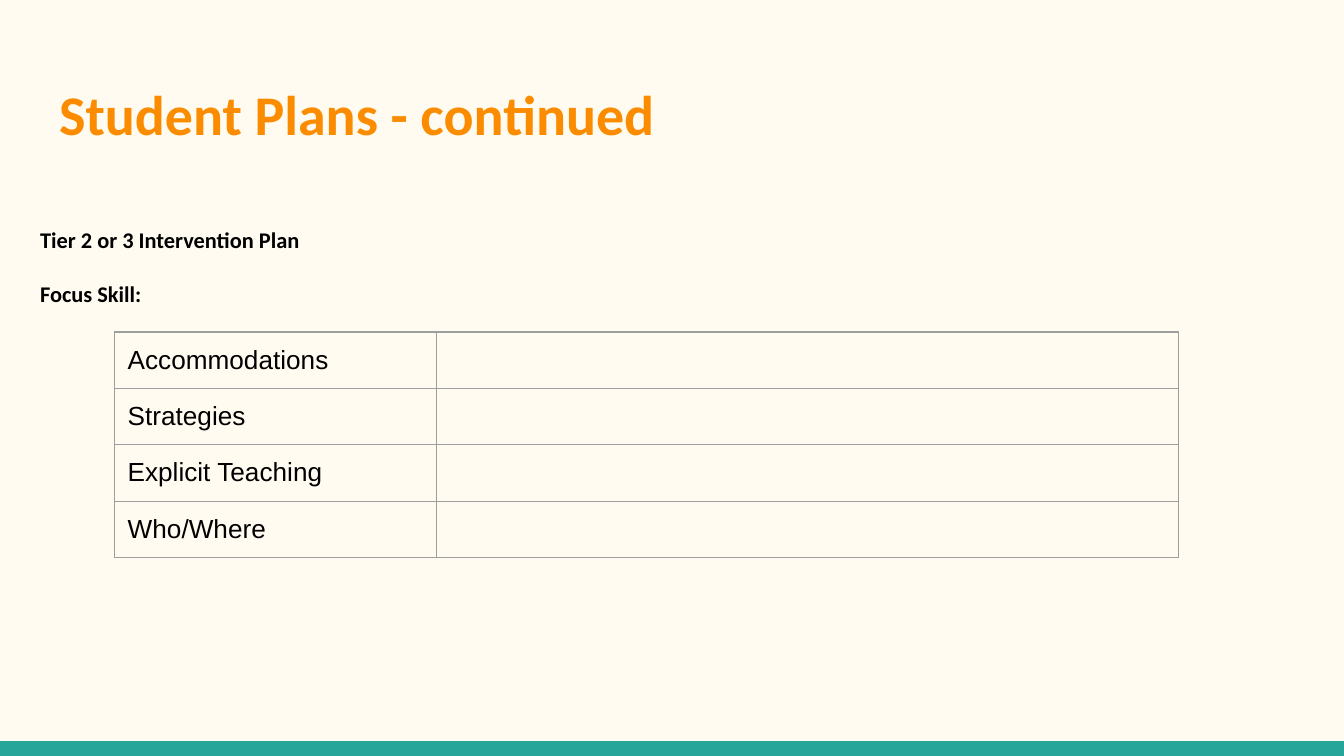
import lxml.etree
import pptx
import pptx.dml.color
import pptx.enum.shapes
import pptx.enum.text
import pptx.oxml.ns
import pptx.util
from pptx.util import Inches

WIDTH = 10
HEIGHT = WIDTH * 9 / 16
BAR_HEIGHT = 0.11
PLAN_ROWS = ["Accommodations", "Strategies", "Explicit Teaching", "Who/Where"]
COLUMN_WIDTHS = [2.4, 5.52]
ROW_HEIGHT = 0.42
CELL_FONT = "Arial"
CELL_SIZE = 14


def color(value):
    return pptx.dml.color.RGBColor.from_string(value)


def add_element(parent, tag, **attributes):
    return lxml.etree.SubElement(parent, pptx.oxml.ns.qn(tag), **attributes)


def set_margins(target):
    target.margin_left = target.margin_right = Inches(0.1)
    target.margin_top = target.margin_bottom = Inches(0.1)


def format_runs(paragraph, font_name, size, font_color, bold=False):
    paragraph.alignment = pptx.enum.text.PP_ALIGN.LEFT
    for run in paragraph.runs:
        run.font.name = font_name
        run.font.size = pptx.util.Pt(size)
        run.font.bold = bold
        run.font.color.rgb = color(font_color)


def format_frame(text_frame):
    text_frame.word_wrap = True
    text_frame.auto_size = pptx.enum.text.MSO_AUTO_SIZE.NONE
    text_frame.vertical_anchor = pptx.enum.text.MSO_ANCHOR.TOP
    set_margins(text_frame)


def add_bottom_bar(slide):
    bar = slide.shapes.add_shape(
        pptx.enum.shapes.MSO_SHAPE.RECTANGLE, Inches(0),
        Inches(HEIGHT - BAR_HEIGHT), Inches(WIDTH), Inches(BAR_HEIGHT))
    bar.shadow.inherit = False
    bar.fill.solid()
    bar.fill.fore_color.rgb = color("26A69A")
    bar.line.fill.background()


def set_title(slide, text):
    title = slide.shapes.title
    title.left, title.top = Inches(0.34), Inches(0.49)
    title.width, title.height = Inches(9.32), Inches(0.67)
    title.text_frame.text = text
    format_frame(title.text_frame)
    format_runs(title.text_frame.paragraphs[0], "Calibri", 30, "FB8C00", True)


def add_plan_heading(slide, lines):
    box = slide.shapes.add_textbox(
        Inches(0.2), Inches(1.58), Inches(9.32), Inches(3.65))
    box.text_frame.text = "\n".join(lines)
    format_frame(box.text_frame)
    for index, paragraph in enumerate(box.text_frame.paragraphs):
        format_runs(paragraph, "Calibri", 12, "000000", True)
        paragraph.space_before = pptx.util.Pt(14.6 if index else 0)


def set_borders(cell, border_color, width):
    properties = cell._tc.get_or_add_tcPr()
    for side in ("a:lnL", "a:lnR", "a:lnT", "a:lnB"):
        line = add_element(properties, side, w=str(pptx.util.Pt(width)))
        fill = add_element(line, "a:solidFill")
        add_element(fill, "a:srgbClr", val=border_color)


def format_cell(cell, text):
    set_margins(cell)
    set_borders(cell, "9E9E9E", 0.75)
    cell.fill.background()
    paragraph = cell.text_frame.paragraphs[0]
    if text:
        paragraph.text = text
        format_runs(paragraph, CELL_FONT, CELL_SIZE, "000000")
    else:
        ending = add_element(
            paragraph._p, "a:endParaRPr", sz=str(CELL_SIZE * 100))
        add_element(ending, "a:latin", typeface=CELL_FONT)


def add_plan_table(slide, labels):
    table = slide.shapes.add_table(
        len(labels), len(COLUMN_WIDTHS), Inches(0.85), Inches(2.47),
        Inches(sum(COLUMN_WIDTHS)), Inches(ROW_HEIGHT * len(labels))).table
    table.first_row = False
    table.horz_banding = False
    for column, width in zip(table.columns, COLUMN_WIDTHS):
        column.width = Inches(width)
    for row, label in zip(table.rows, labels):
        row.height = Inches(ROW_HEIGHT)
        for cell, text in zip(row.cells, (label, "")):
            format_cell(cell, text)


def main():
    presentation = pptx.Presentation()
    presentation.slide_width = Inches(WIDTH)
    presentation.slide_height = Inches(HEIGHT)
    slide = presentation.slides.add_slide(presentation.slide_layouts[5])
    slide.background.fill.solid()
    slide.background.fill.fore_color.rgb = color("FFFBF0")
    add_bottom_bar(slide)
    set_title(slide, "Student Plans - continued")
    add_plan_heading(slide, ["Tier 2 or 3 Intervention Plan", "Focus Skill:"])
    add_plan_table(slide, PLAN_ROWS)
    presentation.save("out.pptx")


if __name__ == "__main__":
    main()
